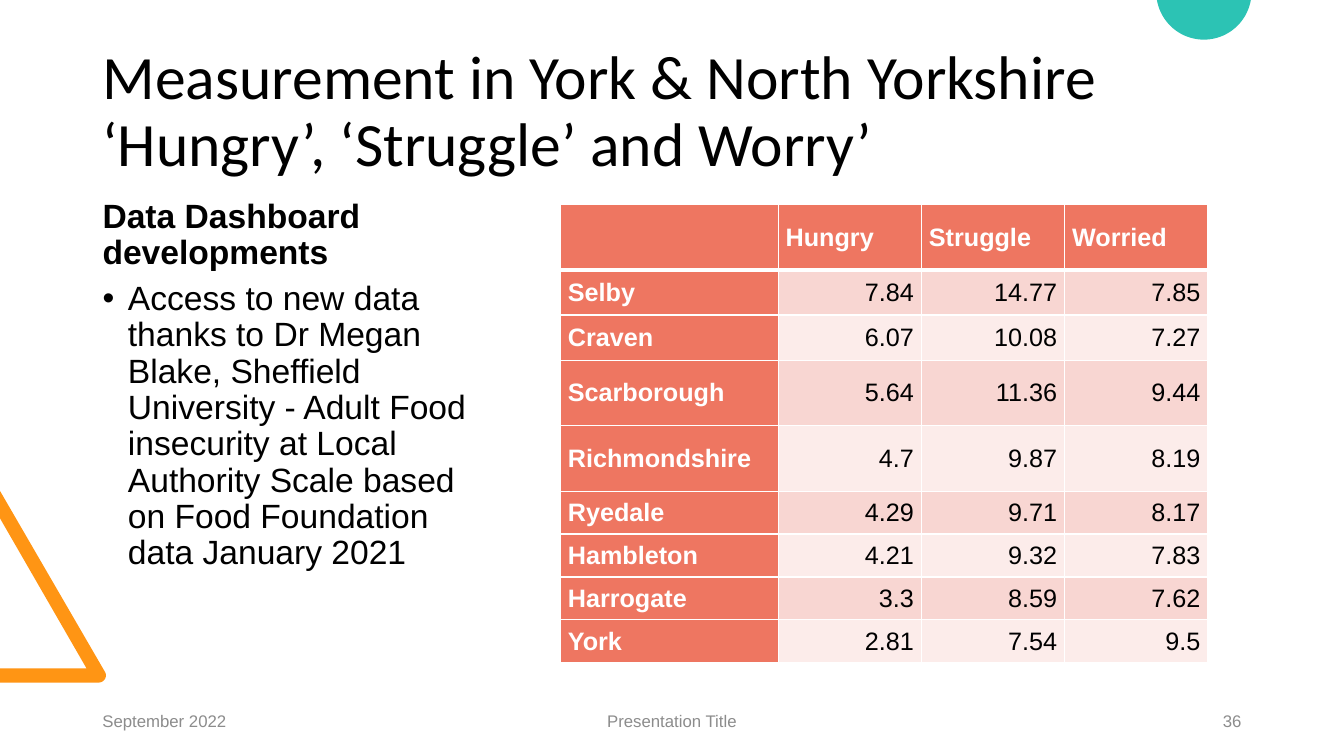
"""Build the slide on food insecurity measurement in York and North Yorkshire."""
from dataclasses import dataclass
from math import cos, radians, sin

from lxml.etree import SubElement
from pptx import Presentation
from pptx.dml.color import RGBColor
from pptx.enum.text import MSO_ANCHOR, MSO_AUTO_SIZE, PP_ALIGN
from pptx.oxml.ns import qn
from pptx.util import Cm, Pt

COLOURS = {
    "text": "000000",
    "white": "FFFFFF",
    "footer": "8C8C8C",
    "orange": "FF9514",
    "teal": "2CC3B4",
    "coral": "EE7661",
    "band_dark": "F8D6D2",
    "band_light": "FCECEA",
}
Point = tuple[float, float]


@dataclass
class Passage:
    text: str
    box: tuple[float, float, float, float]
    size: int
    anchor: MSO_ANCHOR
    font: str = "Arial"
    colour: str = "text"
    bold: bool = False
    align: PP_ALIGN = PP_ALIGN.LEFT
    line_spacing: float = 1.0
    space_before: int = 0


@dataclass
class District:
    name: str
    figures: tuple[str, str, str]
    height: float


TITLE = Passage("Measurement in York & North Yorkshire\n‘Hungry’, ‘Struggle’ and Worry’",
                (2.33, 1.01, 29.21, 3.68), 44, MSO_ANCHOR.MIDDLE, "Calibri", line_spacing=0.9)
HEADING = Passage("Data Dashboard developments", (2.33, 4.68, 11.3, 2.29), 24,
                  MSO_ANCHOR.BOTTOM, bold=True, line_spacing=0.9, space_before=10)
ACCESS = Passage("Access to new data thanks to Dr Megan Blake, Sheffield University - Adult Food "
                 "insecurity at Local Authority Scale based on Food Foundation data January 2021",
                 (2.33, 6.97, 10.13, 10.23), 24, MSO_ANCHOR.TOP, line_spacing=0.9, space_before=10)
FOOTERS = [
    Passage(text, (left, 17.65, width, 1.01), 12, MSO_ANCHOR.MIDDLE, colour="footer", align=align)
    for text, left, width, align in (
        ("Presentation Title", 11.22, 11.43, PP_ALIGN.CENTER),
        ("36", 23.92, 7.62, PP_ALIGN.RIGHT),
        ("September 2022", 2.33, 7.62, PP_ALIGN.LEFT),
    )
]
DISTRICTS = [
    District("", ("Hungry", "Struggle", "Worried"), 1.64),
    District("Selby", ("7.84", "14.77", "7.85"), 1.14),
    District("Craven", ("6.07", "10.08", "7.27"), 1.14),
    District("Scarborough", ("5.64", "11.36", "9.44"), 1.65),
    District("Richmondshire", ("4.7", "9.87", "8.19"), 1.65),
    District("Ryedale", ("4.29", "9.71", "8.17"), 1.08),
    District("Hambleton", ("4.21", "9.32", "7.83"), 1.08),
    District("Harrogate", ("3.3", "8.59", "7.62"), 1.08),
    District("York", ("2.81", "7.54", "9.5"), 1.08),
]
COLUMN_WIDTHS = (5.49, 3.61, 3.61, 3.61)


def colour_of(name: str) -> RGBColor:
    """Return the named colour."""
    return RGBColor.from_string(COLOURS[name])


def format_font(paragraph, name: str, size: int, colour: str, bold: bool) -> None:
    """Set the font of a whole paragraph."""
    font = paragraph.font
    font.name, font.size, font.bold = name, Pt(size), bold
    font.color.rgb = colour_of(colour)


def write_passage(holder, passage: Passage) -> None:
    """Place a text holder and fill it with a formatted passage."""
    holder.left, holder.top, holder.width, holder.height = map(Cm, passage.box)
    frame = holder.text_frame
    frame.word_wrap = True
    frame.auto_size = MSO_AUTO_SIZE.NONE
    frame.vertical_anchor = passage.anchor
    paragraph = frame.paragraphs[0]
    paragraph.text = passage.text
    paragraph.alignment = passage.align
    paragraph.line_spacing = passage.line_spacing
    paragraph.space_before = Pt(passage.space_before)
    format_font(paragraph, passage.font, passage.size, passage.colour, passage.bold)


def arc(x: float, y: float, radius: float, start: float, end: float) -> list[Point]:
    """Return points along a circular arc, with angles in degrees."""
    steps = 40
    angles = [radians(start + (end - start) * step / steps) for step in range(steps + 1)]
    return [(x + radius * cos(angle), y + radius * sin(angle)) for angle in angles]


def draw_outline(slide, points: list[Point], colour: str) -> None:
    """Draw a closed, filled outline through points in centimetres."""
    first, *rest = [(Cm(x), Cm(y)) for x, y in points]
    builder = slide.shapes.build_freeform(*first)
    builder.add_line_segments(rest, close=True)
    outline = builder.convert_to_shape()
    outline.shadow.inherit = False
    outline.fill.solid()
    outline.fill.fore_color.rgb = colour_of(colour)
    outline.line.fill.background()


def add_borders(cell, widths: dict[str, int]) -> None:
    """Give a cell white borders of the stated widths in points."""
    properties = cell._tc.get_or_add_tcPr()
    for side, width in widths.items():
        line = SubElement(properties, qn(f"a:{side}"), w=str(Pt(width)))
        fill = SubElement(line, qn("a:solidFill"))
        SubElement(fill, qn("a:srgbClr"), val=COLOURS["white"])


def draw_table(slide) -> None:
    """Draw the table of districts and their figures."""
    table = slide.shapes.add_table(
        len(DISTRICTS), len(COLUMN_WIDTHS), Cm(14.12), Cm(5.16), Cm(sum(COLUMN_WIDTHS)),
        Cm(sum(district.height for district in DISTRICTS))).table
    table.first_col = True
    for column, width in zip(table.columns, COLUMN_WIDTHS):
        column.width = Cm(width)
    for row, district in enumerate(DISTRICTS):
        table.rows[row].height = Cm(district.height)
        band = "band_dark" if row % 2 else "band_light"
        for column, text in enumerate((district.name, *district.figures)):
            cell = table.cell(row, column)
            label = row == 0 or column == 0
            add_borders(cell, {"lnL": 1, "lnR": 1, "lnT": 3 if row == 1 else 1,
                               "lnB": 3 if row == 0 else 1})
            cell.fill.solid()
            cell.fill.fore_color.rgb = colour_of("coral" if label else band)
            cell.vertical_anchor = MSO_ANCHOR.MIDDLE
            cell.margin_left = cell.margin_right = Cm(0.19)
            cell.margin_top = cell.margin_bottom = 0
            paragraph = cell.text_frame.paragraphs[0]
            paragraph.text = text
            paragraph.alignment = PP_ALIGN.LEFT if label else PP_ALIGN.RIGHT
            format_font(paragraph, "Arial", 18, "white" if label else "text", label)


def main() -> None:
    """Build and save the slide."""
    deck = Presentation()
    deck.slide_width, deck.slide_height = Cm(33.87), Cm(19.05)
    slide = deck.slides.add_slide(deck.slide_layouts.get_by_name("Comparison"))
    draw_outline(slide, [(0, 17.2), (0, 16.84), (2.18, 16.84), (0, 13.06), (0, 12.37),
                         *arc(2.49, 17.02, 0.18, -30, 90)], "orange")
    draw_outline(slide, arc(30.34, -0.2, 1.2, 9.6, 170.4), "teal")

    title, heading, access, *spares = slide.placeholders
    for spare in spares:
        spare.element.getparent().remove(spare.element)
    for holder, passage in ((title, TITLE), (heading, HEADING), (access, ACCESS)):
        write_passage(holder, passage)
    bullet = access.text_frame.paragraphs[0]._p.get_or_add_pPr()
    bullet.set("marL", str(Cm(0.64)))
    bullet.set("indent", str(Cm(-0.64)))

    draw_table(slide)
    for footer in FOOTERS:
        write_passage(slide.shapes.add_textbox(*map(Cm, footer.box)), footer)
    deck.save("out.pptx")


if __name__ == "__main__":
    main()
